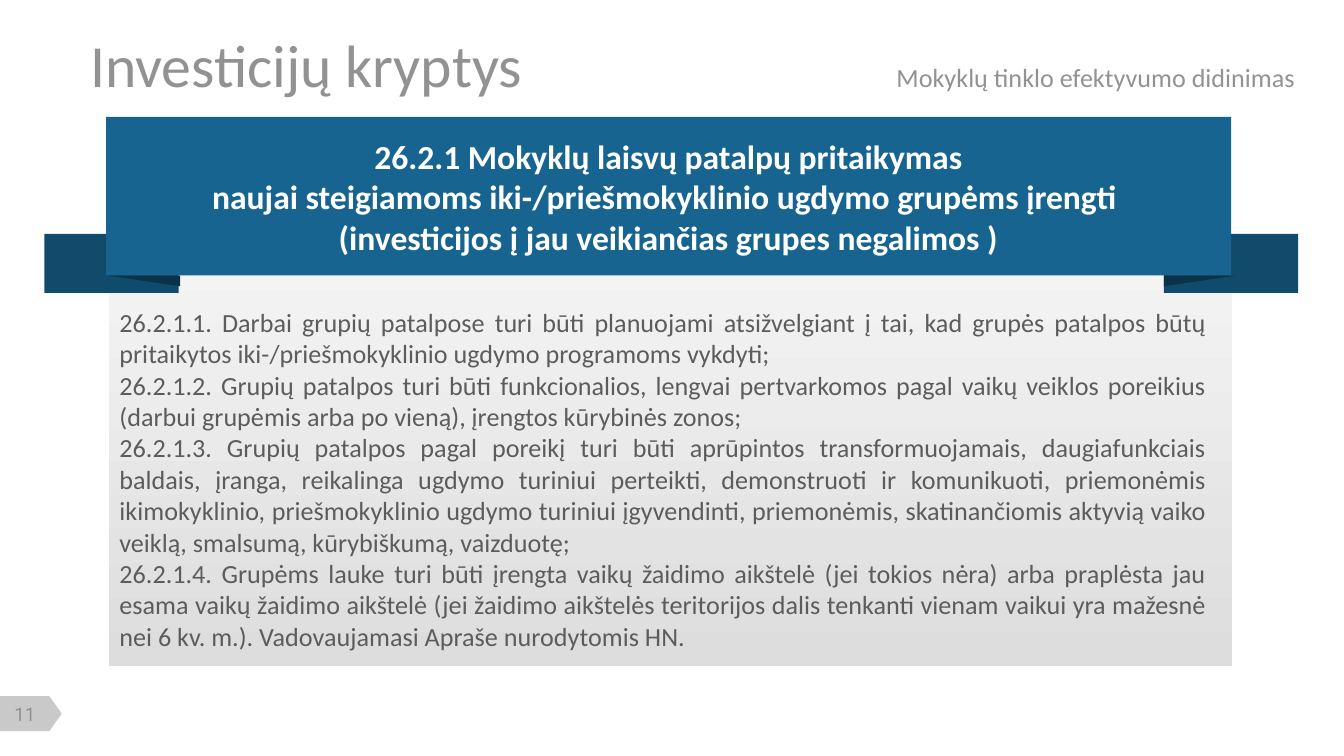
from dataclasses import dataclass

from lxml.etree import SubElement
from pptx import Presentation
from pptx.dml.color import RGBColor
from pptx.enum.shapes import MSO_SHAPE
from pptx.enum.text import MSO_ANCHOR, MSO_AUTO_SIZE, PP_ALIGN
from pptx.oxml.ns import qn
from pptx.util import Inches, Pt


@dataclass(frozen=True)
class Theme:
    font: str = "Calibri"
    number_font: str = "Roboto"
    muted: str = "929292"
    body: str = "5C5C5C"
    white: str = "FFFFFF"
    ribbon: str = "176490"
    tail: str = "114B6C"
    fold: str = "0C3248"
    tag: str = "C9C9C9"
    panel_bottom: str = "DDDDDD"
    panel_top: str = "F4F4F4"
    title_size: int = 32
    heading_size: int = 18
    body_size: int = 14
    number_size: int = 10


THEME = Theme()


@dataclass(frozen=True)
class Frame:
    left: float
    top: float
    width: float
    height: float

    def lengths(self) -> tuple:
        return tuple(Inches(n) for n in (self.left, self.top, self.width, self.height))


@dataclass(frozen=True)
class TextStyle:
    size: int
    color: str
    align: PP_ALIGN
    font: str = THEME.font
    bold: bool = False


@dataclass(frozen=True)
class RibbonEnd:
    tail_left: float
    fold_outer: float
    fold_inner: float


FOLD_TOP, FOLD_BOTTOM = 2.05, 2.13
RIBBON_ENDS = [RibbonEnd(0.33, 0.8, 1.34), RibbonEnd(8.66, 9.2, 8.66)]
HEADING = [
    "26.2.1 Mokyklų laisvų patalpų pritaikymas",
    "naujai steigiamoms iki-/priešmokyklinio ugdymo grupėms įrengti ",
    "(investicijos į jau veikiančias grupes negalimos )",
]
REQUIREMENTS = [
    "26.2.1.1. Darbai grupių patalpose turi būti planuojami atsižvelgiant į tai, kad grupės "
    "patalpos būtų pritaikytos iki-/priešmokyklinio ugdymo programoms vykdyti;",
    "26.2.1.2. Grupių patalpos turi būti funkcionalios, lengvai pertvarkomos pagal vaikų "
    "veiklos poreikius (darbui grupėmis arba po vieną), įrengtos kūrybinės zonos;",
    "26.2.1.3. Grupių patalpos pagal poreikį turi būti aprūpintos transformuojamais, "
    "daugiafunkciais baldais, įranga, reikalinga ugdymo turiniui perteikti, demonstruoti ir "
    "komunikuoti, priemonėmis ikimokyklinio, priešmokyklinio ugdymo turiniui įgyvendinti, "
    "priemonėmis, skatinančiomis aktyvią vaiko veiklą, smalsumą, kūrybiškumą, vaizduotę;",
    "26.2.1.4. Grupėms lauke turi būti įrengta vaikų žaidimo aikštelė (jei tokios nėra) arba "
    "praplėsta jau esama vaikų žaidimo aikštelė (jei žaidimo aikštelės teritorijos dalis "
    "tenkanti vienam vaikui yra mažesnė nei 6 kv. m.). Vadovaujamasi Apraše nurodytomis HN.",
]


def paint(shape, color: str) -> None:
    shape.shadow.inherit = False
    shape.line.fill.background()
    shape.fill.solid()
    shape.fill.fore_color.rgb = RGBColor.from_string(color)


def add_block(shapes, frame: Frame, color: str, preset=MSO_SHAPE.RECTANGLE):
    block = shapes.add_shape(preset, *frame.lengths())
    paint(block, color)
    return block


def style_paragraph(para, style: TextStyle) -> None:
    para.alignment = style.align
    para.font.name = style.font
    para.font.size = Pt(style.size)
    para.font.bold = style.bold
    para.font.color.rgb = RGBColor.from_string(style.color)


def write(frame, lines: list[str], style: TextStyle) -> None:
    frame.word_wrap = True
    frame.text = "\n".join(lines)
    for para in frame.paragraphs:
        style_paragraph(para, style)


def set_title(page) -> None:
    """Place the title and, after a tab stop, the smaller topic name."""
    title = page.shapes.title
    title.left, title.top, title.width, title.height = Frame(0.67, 0.28, 9.15, 0.39).lengths()
    frame = title.text_frame
    frame.auto_size = MSO_AUTO_SIZE.NONE
    frame.vertical_anchor = MSO_ANCHOR.MIDDLE
    frame.margin_left = 0
    para = frame.paragraphs[0]
    tabs = SubElement(para._p.get_or_add_pPr(), qn("a:tabLst"))
    SubElement(tabs, qn("a:tab"), pos=str(Inches(6)), algn="l")
    style_paragraph(para, TextStyle(THEME.title_size, THEME.muted, PP_ALIGN.LEFT))
    para.add_run().text = "Investicijų kryptys\t"
    topic = para.add_run()
    topic.text = "Mokyklų tinklo efektyvumo didinimas"
    topic.font.size = Pt(THEME.body_size)


def add_page_number(page) -> None:
    tag = add_block(page.shapes, Frame(0.1, 5.08, 0.26, 0.46), THEME.tag,
                    MSO_SHAPE.FLOWCHART_OFFPAGE_CONNECTOR)
    tag.rotation = 270
    box = page.shapes.add_textbox(*Frame(0.02, 5.23, 0.33, 0.17).lengths())
    frame = box.text_frame
    frame.margin_left = frame.margin_right = frame.margin_top = frame.margin_bottom = 0
    frame.vertical_anchor = MSO_ANCHOR.MIDDLE
    write(frame, ["11"], TextStyle(THEME.number_size, THEME.muted, PP_ALIGN.CENTER,
                                   THEME.number_font))


def add_panel(page) -> None:
    panel = add_block(page.shapes, Frame(0.81, 1.9, 8.36, 3.06), THEME.panel_top)
    panel.fill.gradient()
    panel.fill.gradient_angle = 90
    for stop, color in zip(panel.fill.gradient_stops, (THEME.panel_bottom, THEME.panel_top)):
        stop.color.rgb = RGBColor.from_string(color)


def add_ribbon(page) -> None:
    shapes = page.shapes.add_group_shape().shapes
    for end in RIBBON_ENDS:
        add_block(shapes, Frame(end.tail_left, 1.74, 1, 0.44), THEME.tail)
    band = add_block(shapes, Frame(0.79, 0.87, 8.37, 1.18), THEME.ribbon)
    band.text_frame.vertical_anchor = MSO_ANCHOR.MIDDLE
    write(band.text_frame, HEADING,
          TextStyle(THEME.heading_size, THEME.white, PP_ALIGN.CENTER, bold=True))
    for end in RIBBON_ENDS:
        outline = shapes.build_freeform(Inches(end.fold_outer), Inches(FOLD_TOP))
        outline.add_line_segments([(Inches(end.fold_inner), Inches(FOLD_TOP)),
                                   (Inches(end.fold_inner), Inches(FOLD_BOTTOM))])
        paint(outline.convert_to_shape(), THEME.fold)


def add_requirements(page) -> None:
    box = page.shapes.add_textbox(*Frame(0.79, 2.23, 8.29, 2.69).lengths())
    write(box.text_frame, REQUIREMENTS,
          TextStyle(THEME.body_size, THEME.body, PP_ALIGN.JUSTIFY))


def main() -> None:
    deck = Presentation()
    deck.slide_width = Inches(10)
    deck.slide_height = deck.slide_width * 9 // 16
    page = deck.slides.add_slide(deck.slide_layouts[5])
    set_title(page)
    add_page_number(page)
    add_panel(page)
    add_ribbon(page)
    add_requirements(page)
    deck.save("out.pptx")


if __name__ == "__main__":
    main()
